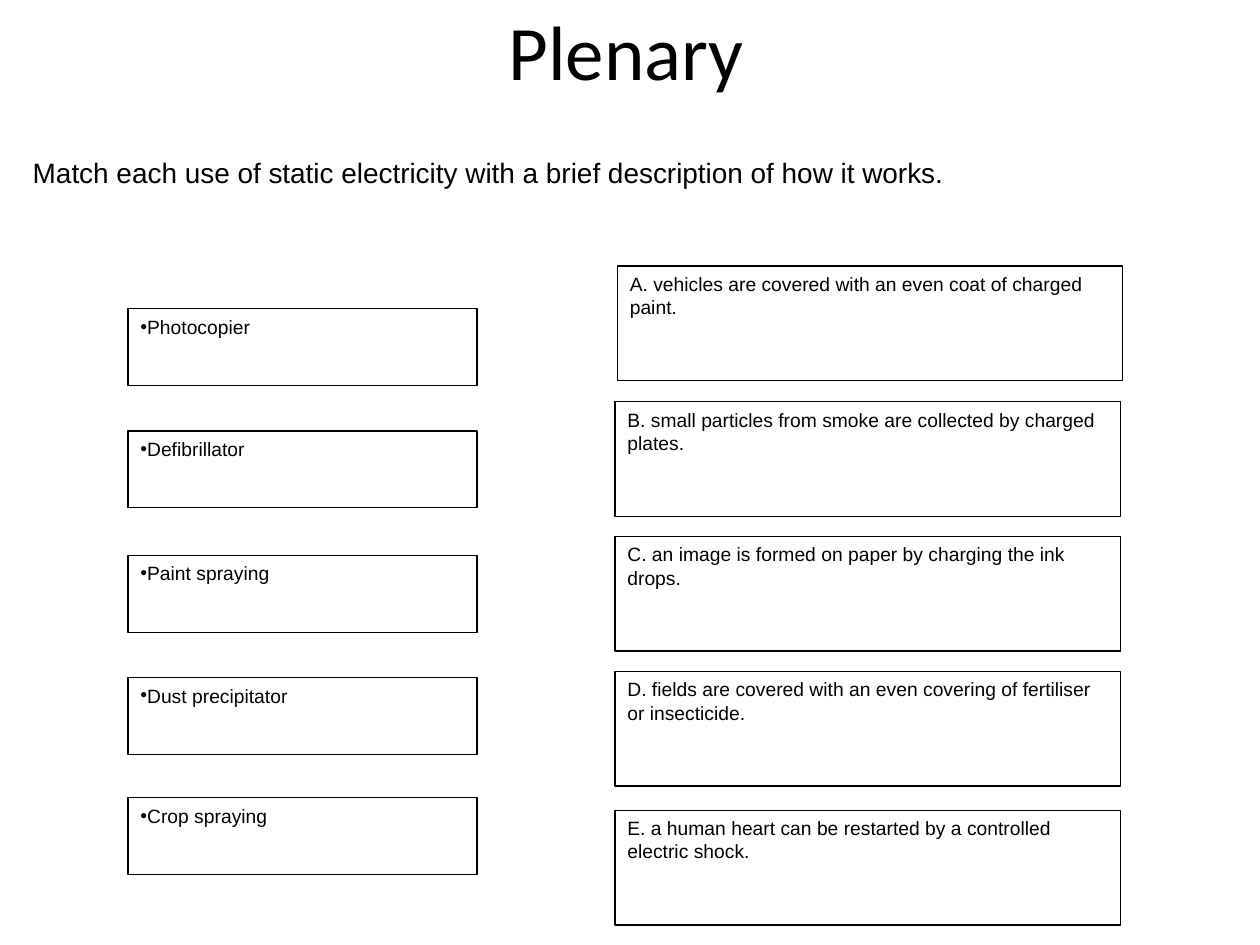
from lxml.etree import SubElement
from pptx import Presentation
from pptx.dml.color import RGBColor
from pptx.enum.shapes import MSO_SHAPE
from pptx.enum.text import MSO_ANCHOR, PP_ALIGN
from pptx.oxml.ns import qn
from pptx.util import Pt

COLOURS = {"ink": "000000", "paper": "FFFFFF"}

# Each card: top edge in points and its wording
USES = [
    (176.4, "Photocopier"),
    (246.3, "Defibrillator"),
    (317.4, "Paint spraying"),
    (387.2, "Dust precipitator"),
    (455.8, "Crop spraying"),
]
DESCRIPTIONS = [
    (152, "A. vehicles are covered with an even coat of charged paint."),
    (229.6, "B. small particles from smoke are collected by charged plates."),
    (306.6, "C. an image is formed on paper by charging the ink drops."),
    (383.7, "D. fields are covered with an even covering of fertiliser or insecticide."),
    (463, "E. a human heart can be restarted by a controlled electric shock."),
]
USE_LEFT = 73.2
DESCRIPTION_LEFT, FIRST_DESCRIPTION_LEFT = 351.4, 352.8


class SlideBuilder:
    """Holds the slide and its shared style."""

    heading_font = "Calibri"
    text_font = "Arial"
    card_size = 11

    def __init__(self, slide):
        self.slide = slide

    def colour(self, name):
        return RGBColor.from_string(COLOURS[name])

    def set_text(self, shape, text, size, font, align, anchor, bullet=None):
        frame = shape.text_frame
        frame.text = text
        frame.word_wrap = True
        frame.vertical_anchor = anchor
        paragraph = frame.paragraphs[0]
        paragraph.alignment = align
        paragraph.space_before = Pt(0)
        self.set_bullet(paragraph, bullet)
        for run in paragraph.runs:
            run.font.name = font
            run.font.size = Pt(size)
            run.font.color.rgb = self.colour("ink")

    def set_bullet(self, paragraph, bullet):
        properties = paragraph._p.get_or_add_pPr()
        properties.set("marL", "0")
        properties.set("indent", "0")
        if bullet:
            SubElement(properties, qn("a:buFont")).set("typeface", self.text_font)
            SubElement(properties, qn("a:buChar")).set("char", bullet)
        else:
            SubElement(properties, qn("a:buNone"))

    def place(self, shape, left, top, width, height):
        shape.left, shape.top = Pt(left), Pt(top)
        shape.width, shape.height = Pt(width), Pt(height)

    def title(self, text, *box):
        shape = self.slide.shapes.title
        self.place(shape, *box)
        self.set_text(shape, text, 44, self.heading_font, PP_ALIGN.CENTER, MSO_ANCHOR.MIDDLE)

    def instruction(self, text, *box):
        shape = self.slide.placeholders[1]
        self.place(shape, *box)
        self.set_text(shape, text, 16, self.text_font, PP_ALIGN.LEFT, MSO_ANCHOR.TOP)

    def card(self, text, left, top, width, height, bullet=None):
        shape = self.slide.shapes.add_shape(
            MSO_SHAPE.RECTANGLE, Pt(left), Pt(top), Pt(width), Pt(height)
        )
        shape.shadow.inherit = False
        shape.fill.solid()
        shape.fill.fore_color.rgb = self.colour("paper")
        shape.line.color.rgb = self.colour("ink")
        shape.line.width = Pt(0.75)
        self.set_text(shape, text, self.card_size, self.text_font,
                      PP_ALIGN.LEFT, MSO_ANCHOR.TOP, bullet)


def main():
    presentation = Presentation()
    presentation.slide_width, presentation.slide_height = Pt(720), Pt(540)
    slide = presentation.slides.add_slide(presentation.slide_layouts[1])
    builder = SlideBuilder(slide)

    # Heading and task
    builder.title("Plenary", 33.8, -16.6, 648, 90)
    builder.instruction(
        "Match each use of static electricity with a brief description of how it works.",
        11.5, 85, 574, 60,
    )

    # Uses on the left
    for top, text in USES:
        builder.card(text, USE_LEFT, top, 199.5, 43.9, bullet="•")

    # Descriptions on the right; the first sits slightly further in
    for index, (top, text) in enumerate(DESCRIPTIONS):
        left = DESCRIPTION_LEFT if index else FIRST_DESCRIPTION_LEFT
        builder.card(text, left, top, 288.7, 65.5)

    presentation.save("out.pptx")


if __name__ == "__main__":
    main()
